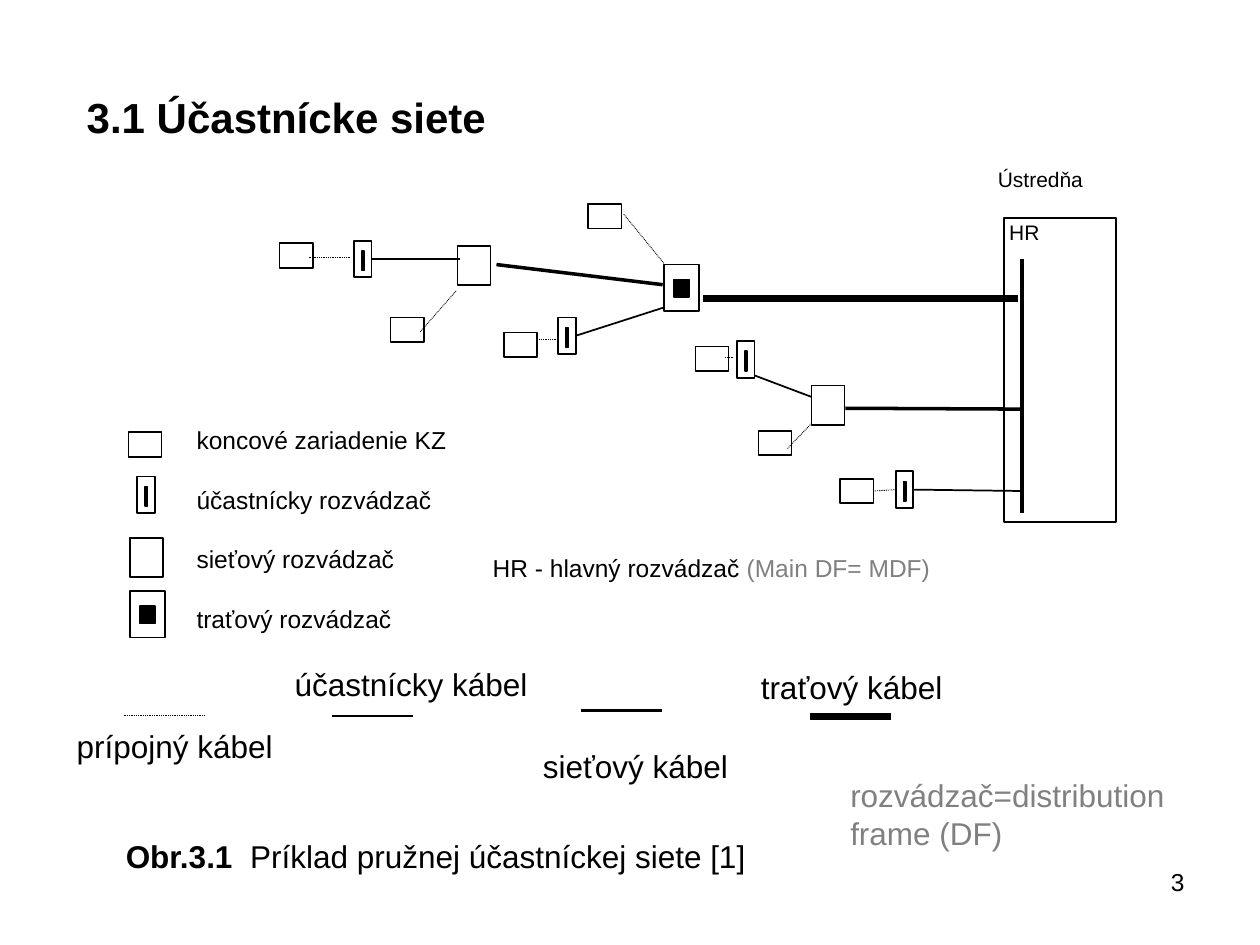
"""Builds a slide with a diagram of a flexible subscriber network."""
from pptx import Presentation
from pptx.dml.color import RGBColor
from pptx.enum.dml import MSO_LINE_DASH_STYLE as Dash
from pptx.enum.shapes import MSO_CONNECTOR as Connector, MSO_SHAPE as Shape
from pptx.enum.text import PP_ALIGN as Align
from pptx.oxml.ns import qn
from pptx.util import Pt
from lxml.etree import SubElement

COLORS = {"ink": "000000", "note": "808080"}
FONT = "Arial"
LEFT, RIGHT = 1, 3

SIZES = {"terminal": (19, 14), "subscriber": (10, 21), "network": (19, 22.5), "trunk": (20, 26.6)}
CORES = {"subscriber": (4.4, 5.8, 1.4, 11.4), "trunk": (5.8, 8.6, 8.6, 10)}
CABLES = {"drop": 0.5, "subscriber": 1, "network": 2, "trunk": 4}

NODES = {
    "terminal A": ("terminal", 159.8, 139),
    "terminal B": ("terminal", 223.2, 181.4),
    "terminal C": ("terminal", 288, 190),
    "terminal D": ("terminal", 336.2, 116.6),
    "terminal E": ("terminal", 397.4, 198),
    "terminal F": ("terminal", 433.4, 246.2),
    "terminal G": ("terminal", 480.2, 273.6),
    "subscriber A": ("subscriber", 202.3, 137.5),
    "subscriber C": ("subscriber", 319, 181.4),
    "subscriber E": ("subscriber", 421.2, 195),
    "subscriber G": ("subscriber", 511.9, 269.3),
    "network A": ("network", 261.4, 140.4),
    "network E": ("network", 463.7, 220.3),
    "trunk": ("trunk", 379.4, 151.2),
    "legend terminal": ("terminal", 73.4, 247),
    "legend subscriber": ("subscriber", 78.5, 272.2),
    "legend network": ("network", 74.2, 307.4),
    "legend trunk": ("trunk", 74.2, 337.7),
}

LINKS = [
    ("trunk", (582, 170.6), (401.8, 170.6)),
    ("network", (378.7, 162.7), (283.7, 151.2)),
    ("network", (483.1, 233.3), (584, 233.8)),
    ("subscriber", ("subscriber A", RIGHT), (262.8, 148)),
    ("subscriber", (379.4, 175.7), ("subscriber C", RIGHT)),
    ("subscriber", (431.3, 214.6), (463.7, 226.8)),
    ("subscriber", ("subscriber G", RIGHT), (584, 280.6)),
    ("drop", (200.2, 146.9), (176.4, 146.9)),
    ("drop", (260.6, 166.3), (239.8, 190)),
    ("drop", (308.2, 193.7), (317.5, 193.7)),
    ("drop", (356.4, 122.4), (379.4, 150.5)),
    ("drop", (419, 204.5), (414, 204.5)),
    ("drop", (463.7, 242), (450, 256.3)),
    ("drop", ("subscriber G", LEFT), ("terminal G", RIGHT)),
    ("drop", (70.6, 409), (117.4, 409)),
    ("subscriber", (190, 409), (236.2, 409)),
    ("network", (332, 406), (378, 406)),
    ("trunk", (463, 409.7), (509, 409.7)),
]

LEGEND = ["koncové zariadenie KZ", "účastnícky rozvádzač", "sieťový rozvádzač", "traťový rozvádzač"]
CABLE_LABELS = [
    ("účastnícky kábel", (161.3, 376.6, 158, 29)),
    ("traťový kábel", (427.7, 378, 136, 29)),
    ("prípojný kábel", (36.7, 411.8, 158, 29)),
    ("sieťový kábel", (303.1, 423.4, 120, 29)),
]


def color(name):
    """Return the named colour."""
    return RGBColor.from_string(COLORS[name])


def add_box(slide, left, top, width, height, filled=False):
    """Add a thinly outlined rectangle, hollow or solid."""
    shape = slide.shapes.add_shape(Shape.RECTANGLE, Pt(left), Pt(top), Pt(width), Pt(height))
    shape.shadow.inherit = False
    if filled:
        shape.fill.solid()
        shape.fill.fore_color.rgb = color("ink")
    else:
        shape.fill.background()
    shape.line.color.rgb = color("ink")
    shape.line.width = Pt(1)
    return shape


def add_node(slide, kind, left, top):
    """Add a network node with its core and return its outline."""
    outline = add_box(slide, left, top, *SIZES[kind])
    if kind in CORES:
        dx, dy, width, height = CORES[kind]
        add_box(slide, left + dx, top + dy, width, height, filled=True)
    return outline


def add_cable(slide, nodes, kind, start, end):
    """Add a cable between points or named node sides."""
    cable = slide.shapes.add_connector(Connector.STRAIGHT, 0, 0, 0, 0)
    if isinstance(start[0], str):
        cable.begin_connect(nodes[start[0]], start[1])
    else:
        cable.begin_x, cable.begin_y = map(Pt, start)
    if isinstance(end[0], str):
        cable.end_connect(nodes[end[0]], end[1])
    else:
        cable.end_x, cable.end_y = map(Pt, end)
    cable.line.color.rgb = color("ink")
    cable.line.width = Pt(CABLES[kind])
    if kind == "drop":
        cable.line.dash_style = Dash.ROUND_DOT
    SubElement(cable._element.spPr, qn("a:effectLst"))


def add_text(slide, box, paragraphs, size=18, tight=False, gap=0, align=Align.LEFT):
    """Add paragraphs made of (text, colour, bold) runs."""
    text_box = slide.shapes.add_textbox(*map(Pt, box))
    frame = text_box.text_frame
    frame.word_wrap = True
    if tight:
        frame.margin_left = frame.margin_right = frame.margin_top = frame.margin_bottom = Pt(0.7)
    for index, runs in enumerate(paragraphs):
        paragraph = frame.add_paragraph() if index else frame.paragraphs[0]
        paragraph.alignment = align
        paragraph.space_before = Pt(gap if index else 0)
        for text, color_name, bold in runs:
            run = paragraph.add_run()
            run.text = text
            run.font.name = FONT
            run.font.size = Pt(size)
            run.font.bold = bold
            run.font.color.rgb = color(color_name)


def plain(text, color_name="ink", bold=False):
    """Return one paragraph holding a single run."""
    return [[(text, color_name, bold)]]


def add_labels(slide):
    """Add the title, labels, legend and caption."""
    add_text(slide, (42.5, 49, 453.6, 36), plain("3.1 Účastnícke siete", bold=True), size=24)
    add_text(slide, (569.5, 94.3, 60, 15), plain("Ústredňa"), size=12, tight=True)
    add_text(slide, (576, 124.6, 21, 22), plain("HR"), size=12, tight=True)
    legend = [[(text, "ink", False)] for text in LEGEND]
    add_text(slide, (111.6, 242, 203, 119), legend, size=14, tight=True, gap=17.4)
    main_frame = [[("HR - hlavný rozvádzač ", "ink", False), ("(Main DF= MDF)", "note", False)]]
    add_text(slide, (280.8, 315.4, 317.5, 24), main_frame, size=14, tight=True)
    for text, box in CABLE_LABELS:
        add_text(slide, box, plain(text))
    caption = [[("Obr.3.1  ", "ink", True), ("Príklad pružnej účastníckej siete [1]", "ink", False)]]
    add_text(slide, (64.8, 474.5, 402.5, 29), caption)
    add_text(slide, (478.8, 440, 221, 50), plain("rozvádzač=distribution frame (DF)", "note"))
    add_text(slide, (516.2, 491.8, 167.8, 37.4), plain("3"), size=14, align=Align.RIGHT)


def main():
    """Build and save the slide."""
    presentation = Presentation()
    presentation.slide_width, presentation.slide_height = Pt(720), Pt(540)
    slide = presentation.slides.add_slide(presentation.slide_layouts[6])
    add_box(slide, 573.8, 124.6, 64, 173.5)
    nodes = {name: add_node(slide, *node) for name, node in NODES.items()}
    add_cable(slide, nodes, "network", (584, 148.3), (584, 293))
    for link in LINKS:
        add_cable(slide, nodes, *link)
    add_labels(slide)
    presentation.save("out.pptx")


if __name__ == "__main__":
    main()
